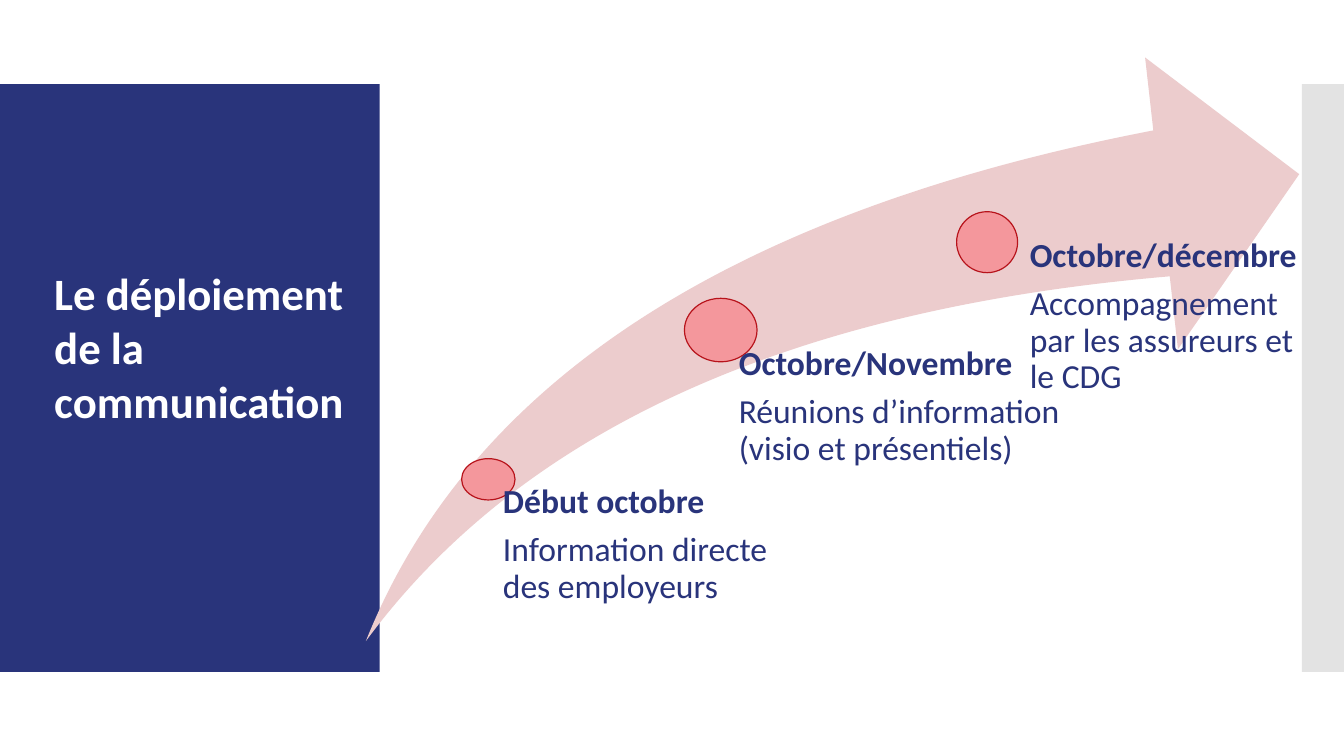
from collections import namedtuple
from dataclasses import dataclass

from lxml import etree
from pptx import Presentation
from pptx.dml.color import RGBColor
from pptx.enum.shapes import MSO_SHAPE as SHAPE
from pptx.enum.text import MSO_ANCHOR as ANCHOR
from pptx.oxml.ns import qn
from pptx.util import Inches, Pt

COLS, ROWS = 160, 90  # square cells, twelve to the inch
CELL = Inches(1 / 12)

Box = namedtuple("Box", "x y w h")
Milestone = namedtuple("Milestone", "when what dot label indent")


@dataclass(frozen=True)
class Theme:
    font: str = "Calibri"
    navy: str = "29347B"
    white: str = "FFFFFF"
    grey: str = "C8C8C8"
    arrow: str = "ECCCCD"
    dot: str = "F4979C"
    dot_line: str = "B7131B"
    title_size: int = 32
    body_size: int = 24


THEME = Theme()

TITLE = "Le déploiement de la communication"

# Dot and label boxes are in cells from the top left of the arrow.
MILESTONES = [
    Milestone("Début octobre", "Information directe des employeurs",
              Box(11.4, 47.76, 6.36, 4.92), Box(14.76, 50.88, 35.5, 20), 1.56),
    Milestone("Octobre/Novembre", "Réunions d’information (visio et présentiels)",
              Box(37.92, 28.68, 8.64, 7.56), Box(41.64, 34.44, 41.52, 14.4), 2.76),
    Milestone("Octobre/décembre", "Accompagnement par les assureurs et le CDG",
              Box(70.32, 18.36, 7.26, 7.26), Box(75.24, 21.6, 36, 13), 3.8),
]


def cells(n):
    return round(n * CELL)


def inside(outer, inner):
    """Move a box given relative to outer into slide cells."""
    return Box(outer.x + inner.x, outer.y + inner.y, inner.w, inner.h)


def add_solid(slide, kind, box, fill, line=None):
    s = slide.shapes.add_shape(kind, *map(cells, box))
    s.shadow.inherit = False
    s.fill.solid()
    s.fill.fore_color.rgb = RGBColor.from_string(fill)
    if line:
        s.line.color.rgb = RGBColor.from_string(line)
        s.line.width = Pt(0.85)
    else:
        s.line.fill.background()
    return s


def add_text_frame(slide, box):
    tf = slide.shapes.add_textbox(*map(cells, box)).text_frame
    tf.word_wrap = True
    tf.vertical_anchor = ANCHOR.TOP
    return tf


def add_run(p, text, size, color, bold):
    r = p.add_run()
    r.text = text
    r.font.name = THEME.font
    r.font.size = Pt(size)
    r.font.bold = bold
    r.font.color.rgb = RGBColor.from_string(color)


def add_title_panel(slide, box):
    add_solid(slide, SHAPE.RECTANGLE, box, THEME.navy)
    tf = add_text_frame(slide, inside(box, Box(5.28, 21.1, 38.4, 20.6)))
    add_run(tf.paragraphs[0], TITLE, THEME.title_size, THEME.white, True)


def add_edge_band(slide, box):
    s = add_solid(slide, SHAPE.RECTANGLE, box, THEME.grey)
    color = s._element.spPr.find(qn("a:solidFill"))[0]
    etree.SubElement(color, qn("a:alpha")).set("val", "50000")


def add_milestone(slide, arrow, m):
    add_solid(slide, SHAPE.OVAL, inside(arrow, m.dot), THEME.dot, THEME.dot_line)
    tf = add_text_frame(slide, inside(arrow, m.label))
    tf.margin_left = cells(m.indent)
    tf.margin_top = tf.margin_right = tf.margin_bottom = 0
    for p, text, bold in ((tf.paragraphs[0], m.when, True),
                          (tf.add_paragraph(), m.what, False)):
        p.line_spacing = 0.9
        p.space_after = Pt(0.35 * THEME.body_size)
        add_run(p, text, THEME.body_size, THEME.navy, bold)


def add_timeline(slide, box):
    s = add_solid(slide, SHAPE.SWOOSH_ARROW, box, THEME.arrow)
    s.adjustments[0] = s.adjustments[1] = 0.25
    for m in MILESTONES:
        add_milestone(slide, box, m)


def main():
    prs = Presentation()
    prs.slide_width, prs.slide_height = cells(COLS), cells(ROWS)
    slide = prs.slides.add_slide(prs.slide_layouts[6])
    add_edge_band(slide, Box(COLS - 5, 10, 5, 70))
    add_title_panel(slide, Box(0, 10, 45.2, 70))
    add_timeline(slide, Box(43.56, 6.84, 111.12, 69.48))
    prs.save("out.pptx")


if __name__ == "__main__":
    main()
